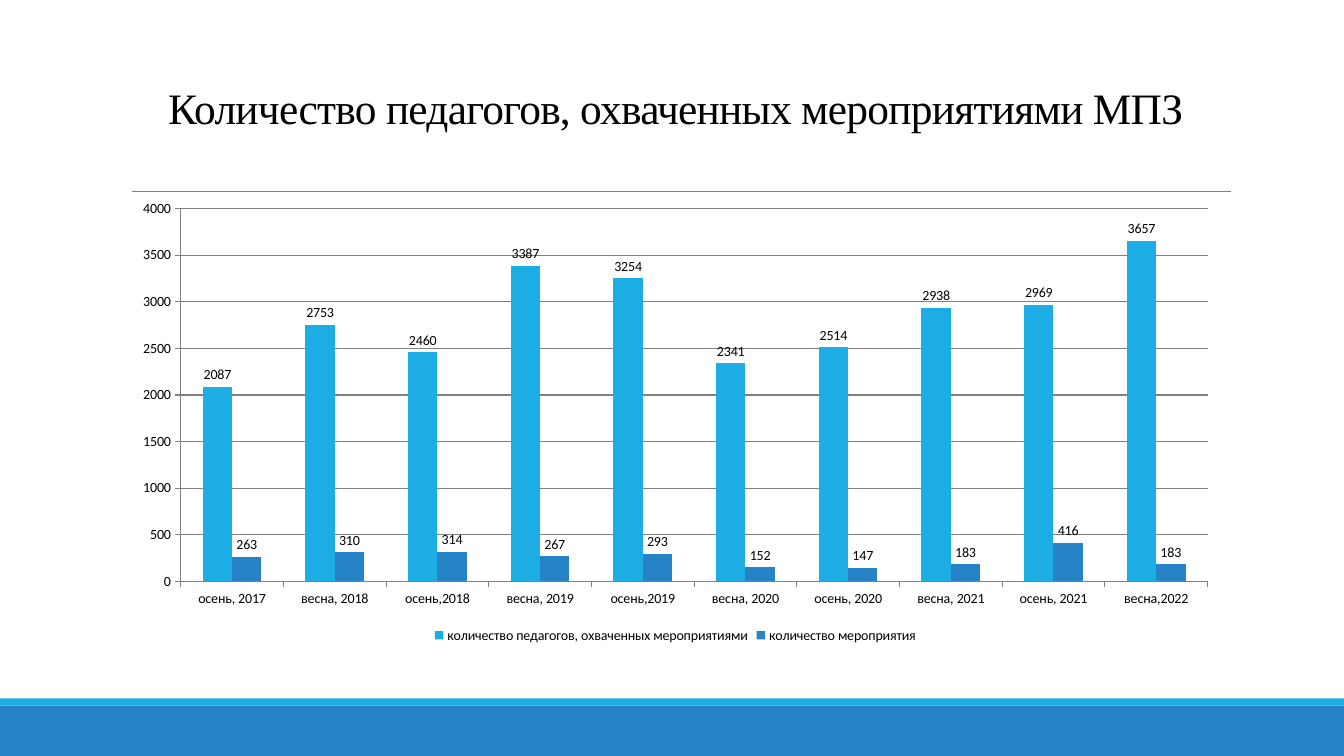
from pptx import Presentation
from pptx.chart.data import CategoryChartData
from pptx.dml.color import RGBColor
from pptx.enum.chart import XL_CHART_TYPE, XL_LABEL_POSITION, XL_LEGEND_POSITION, XL_TICK_MARK
from pptx.enum.shapes import MSO_CONNECTOR, MSO_SHAPE
from pptx.enum.text import MSO_ANCHOR, PP_ALIGN
from pptx.oxml.ns import qn
from pptx.util import Cm, Pt
from lxml.etree import SubElement

SKY = RGBColor(0x1C, 0xAD, 0xE4)
BLUE = RGBColor(0x26, 0x83, 0xC6)
GREY = RGBColor(0x80, 0x80, 0x80)
BLACK = RGBColor(0, 0, 0)

TITLE = "Количество педагогов, охваченных мероприятиями МПЗ"
PERIODS = ["осень, 2017", "весна, 2018", "осень,2018", "весна, 2019", "осень,2019",
           "весна, 2020", "осень, 2020", "весна, 2021", "осень, 2021", "весна,2022"]
SERIES = [
    ("количество педагогов, охваченных мероприятиями", SKY,
     [2087, 2753, 2460, 3387, 3254, 2341, 2514, 2938, 2969, 3657]),
    ("количество мероприятия", BLUE,
     [263, 310, 314, 267, 293, 152, 147, 183, 416, 183]),
]

WIDTH, HEIGHT = Cm(33.87), Cm(19.05)
LEFT, CONTENT_W = Cm(3.05), Cm(27.94)
TITLE_TOP, RULE_Y = Cm(0.79), Cm(4.83)
CHART_H = Cm(11.48)
FOOTER_H, STRIPE_H = Cm(1.27), Cm(0.18)


def write(tf, text, font="Times New Roman", size=31, color=BLACK,
          align=PP_ALIGN.CENTER, anchor=MSO_ANCHOR.MIDDLE, line_spacing=0.85, tracking=-0.5):
    tf.word_wrap = True
    tf.vertical_anchor = anchor
    p = tf.paragraphs[0]
    p.alignment = align
    p.line_spacing = line_spacing
    r = p.add_run()
    r.text = text
    r.font.name, r.font.size = font, Pt(size)
    r.font.color.rgb = color
    r.font._element.set("spc", str(int(tracking * 100)))


def add_band(s, top, height, color):
    sp = s.shapes.add_shape(MSO_SHAPE.RECTANGLE, 0, top, WIDTH, height)
    sp.shadow.inherit = False
    sp.fill.solid()
    sp.fill.fore_color.rgb = color
    sp.line.fill.background()


def add_rule(s):
    line = s.shapes.add_connector(MSO_CONNECTOR.STRAIGHT, Cm(3.33), RULE_Y, Cm(31.01), RULE_Y)
    line.line.color.rgb = GREY
    line.line.width = Pt(0.5)
    SubElement(line._element.spPr, qn("a:effectLst"))


def add_column_chart(s):
    data = CategoryChartData()
    data.categories = PERIODS
    for name, _, values in SERIES:
        data.add_series(name, values)
    chart = s.shapes.add_chart(XL_CHART_TYPE.COLUMN_CLUSTERED, LEFT, RULE_Y,
                               CONTENT_W, CHART_H, data).chart
    chart.font.name, chart.font.size = "Calibri", Pt(10)
    chart.font.color.rgb = BLACK
    chart.has_title = False
    chart.has_legend = True
    chart.legend.position = XL_LEGEND_POSITION.BOTTOM
    chart.legend.include_in_layout = False

    chart.value_axis.has_major_gridlines = True
    for axis in (chart.category_axis, chart.value_axis):
        axis.major_tick_mark = XL_TICK_MARK.OUTSIDE
        axis.minor_tick_mark = XL_TICK_MARK.NONE
    for part in (chart.category_axis, chart.value_axis, chart.value_axis.major_gridlines):
        part.format.line.color.rgb = GREY
        part.format.line.width = Pt(0.75)

    plot = chart.plots[0]
    plot.gap_width = 150
    plot.vary_by_categories = False
    for series, (_, color, _) in zip(plot.series, SERIES):
        series.format.fill.solid()
        series.format.fill.fore_color.rgb = color
        labels = series.data_labels
        labels.show_value = True
        labels.position = XL_LABEL_POSITION.OUTSIDE_END


def main():
    prs = Presentation()
    prs.slide_width, prs.slide_height = WIDTH, HEIGHT
    s = prs.slides.add_slide(prs.slide_layouts[5])

    add_band(s, HEIGHT - FOOTER_H, FOOTER_H, BLUE)
    add_band(s, HEIGHT - FOOTER_H - STRIPE_H, STRIPE_H, SKY)
    add_rule(s)

    title = s.shapes.title
    title.left, title.top = LEFT, TITLE_TOP
    title.width, title.height = CONTENT_W, RULE_Y - TITLE_TOP
    write(title.text_frame, TITLE)

    add_column_chart(s)
    prs.save("out.pptx")


if __name__ == "__main__":
    main()
